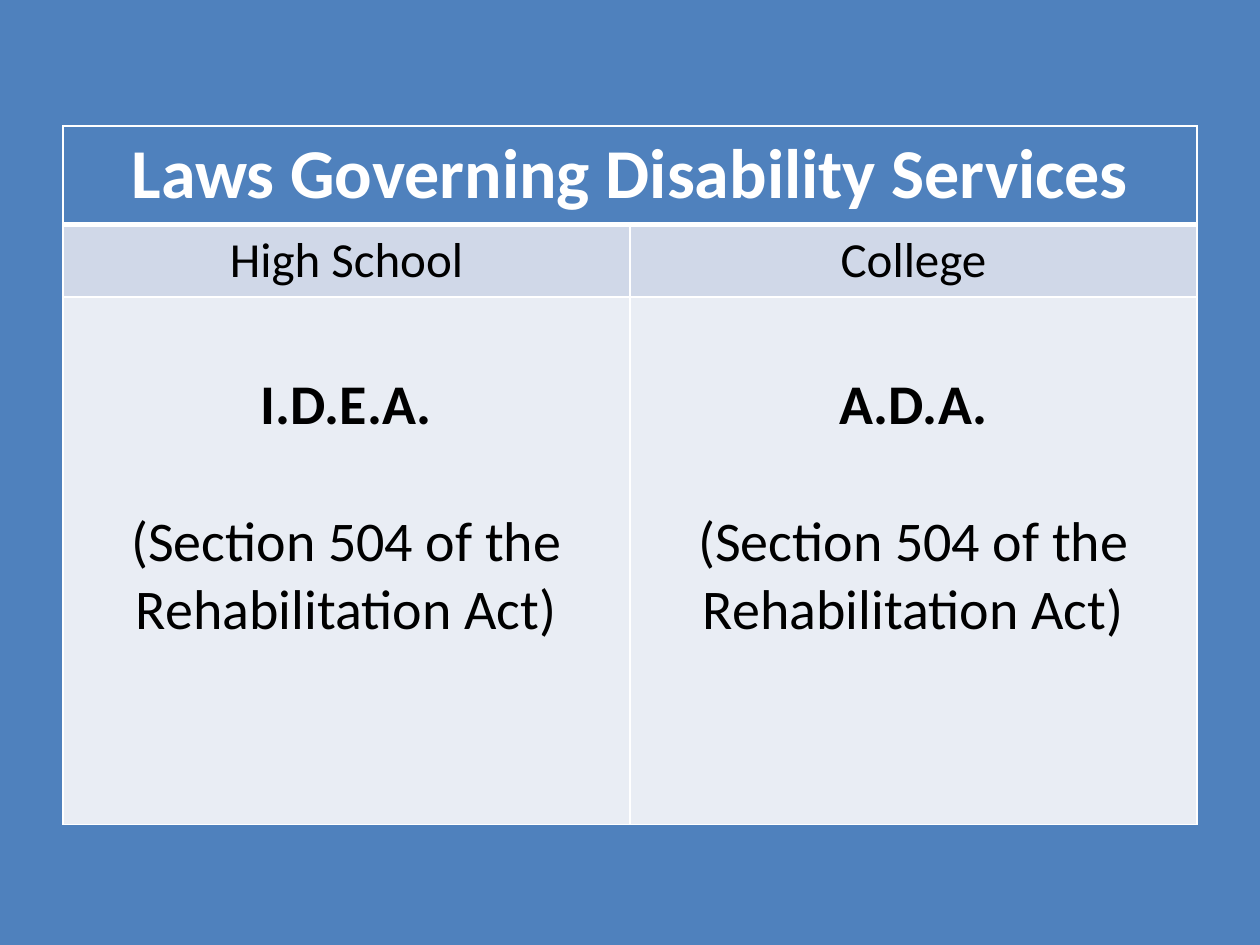
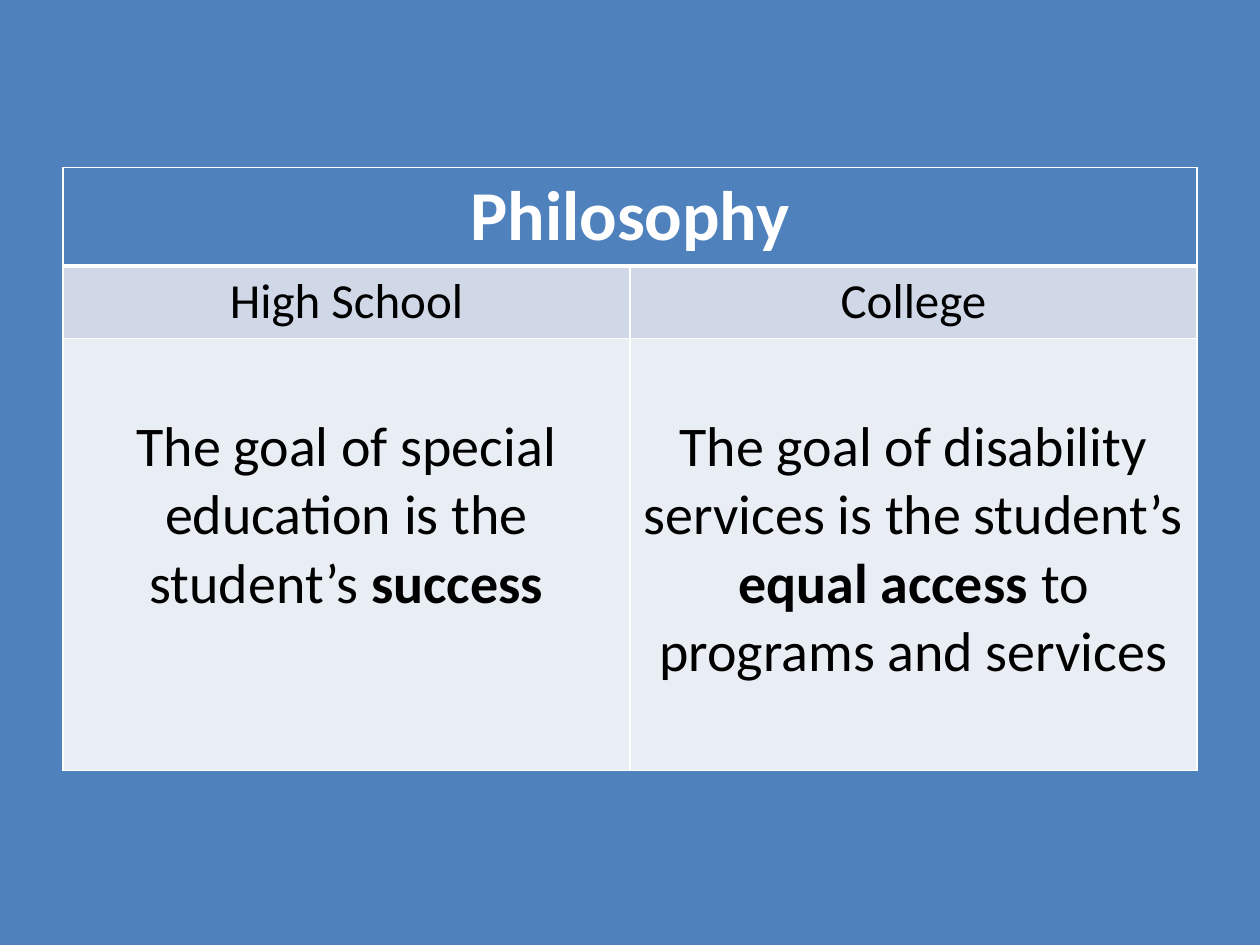
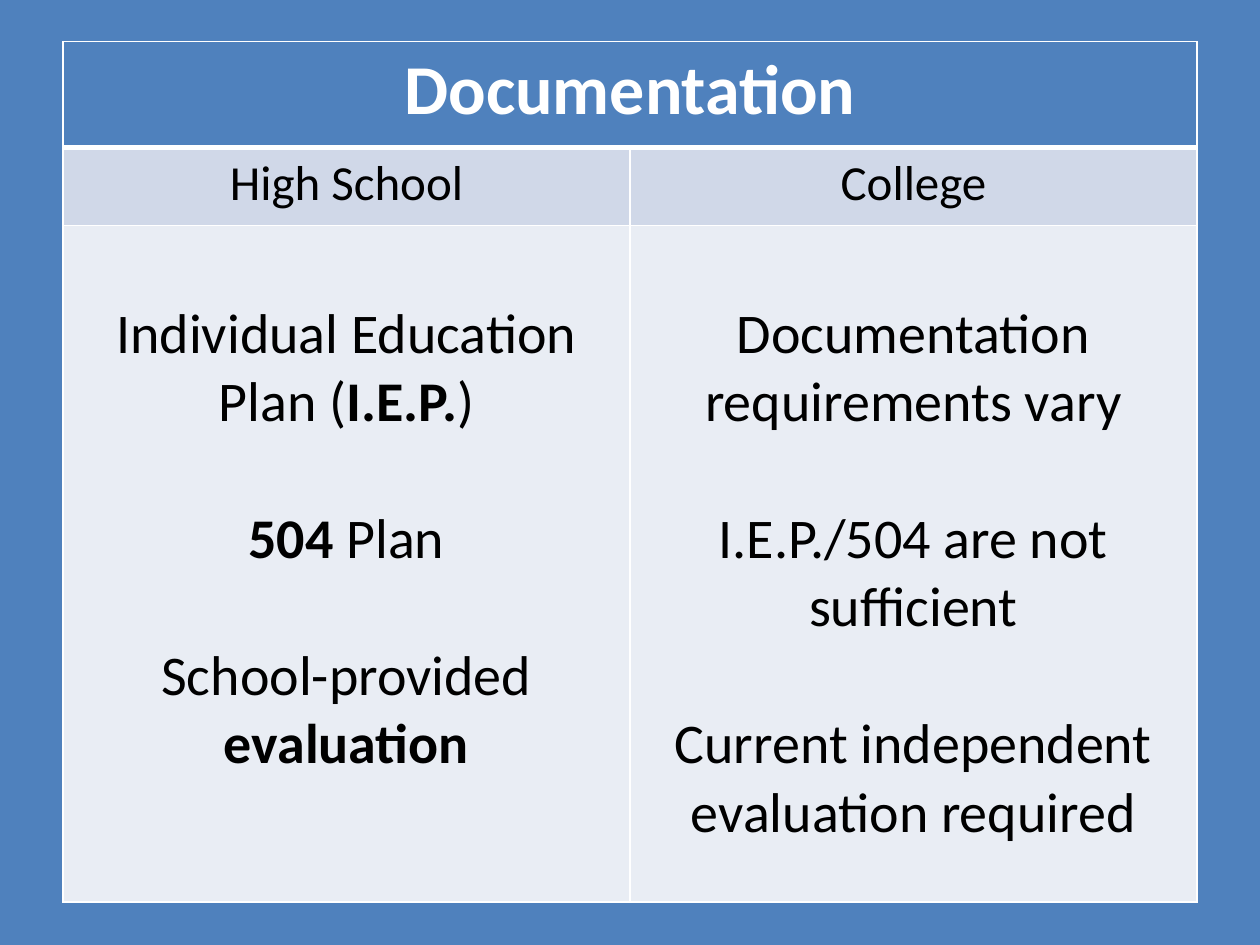
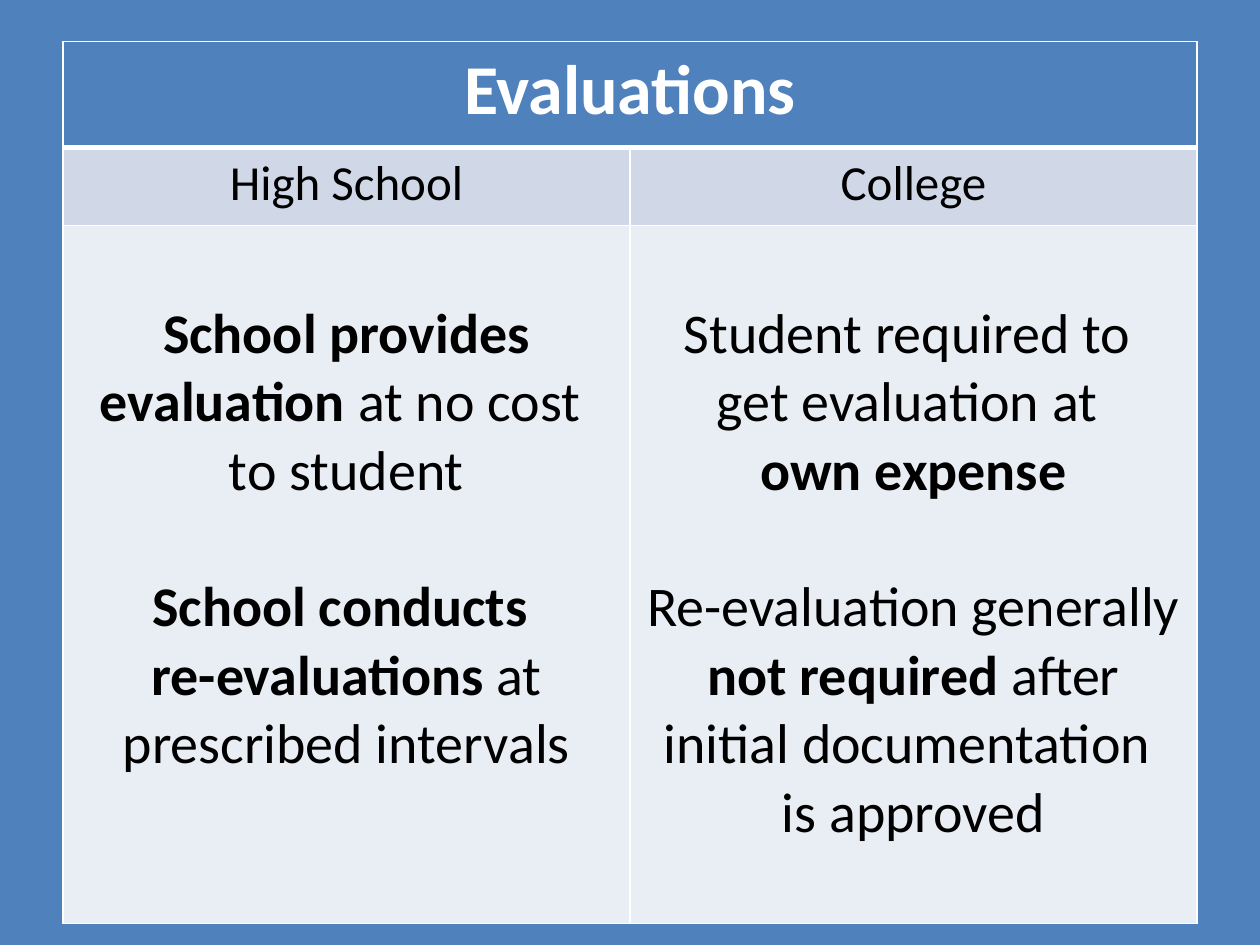
import pptx
import pptx.dml.color
import pptx.enum.text
import pptx.oxml
import pptx.oxml.ns
import pptx.util

Inches, Pt = pptx.util.Inches, pptx.util.Pt

COLORS = {
    "blue": "4F81BD",
    "band": "D0D8E8",
    "body": "E9EDF4",
    "white": "FFFFFF",
    "black": "000000",
}
FONT = "Calibri"
SLIDE_WIDTH, SLIDE_HEIGHT = 10, 7.5
SIDE_MARGIN = SLIDE_WIDTH / 20
TABLE_WIDTH = SLIDE_WIDTH - 2 * SIDE_MARGIN
BODY_LINE = 39  # points taken by one line of body text
CELL_INSET = 0.05
COMPACT_HEADS = (0.78, 0.57)
TALL_HEADS = (0.84, 0.62)

# Fill, text colour and text size of the title, school and body rows
ROW_STYLES = [("blue", "white", 40), ("band", "black", 28), ("body", "black", 32)]

# Text between ** marks is bold
COMPARISONS = [
    {
        "title": "Laws Governing Disability Services",
        "top": 1,
        "rows": (*COMPACT_HEADS, 4.19),
        "high_school": ["**I.D.E.A.**", "(Section 504 of the Rehabilitation Act)"],
        "college": ["**A.D.A.**", "(Section 504 of the Rehabilitation Act)"],
    },
    {
        "title": "Philosophy",
        "top": 1.33,
        "rows": (*COMPACT_HEADS, 3.43),
        "high_school": ["The goal of special education is the student’s **success**"],
        "college": [
            "The goal of disability services is the student’s "
            "**equal access **to programs and services"
        ],
    },
    {
        "title": "Documentation",
        "top": 0.33,
        "rows": (*TALL_HEADS, 5.37),
        "high_school": [
            "Individual Education Plan (**I.E.P.**)",
            "**504** Plan",
            "School-provided **evaluation**",
        ],
        "college": [
            "Documentation requirements vary",
            "I.E.P./504 are not sufficient",
            "Current independent evaluation required",
        ],
    },
    {
        "title": "Evaluations",
        "top": 0.33,
        "rows": (*TALL_HEADS, 5.54),
        "high_school": [
            "**School provides evaluation **at no cost \nto student",
            "**School conducts \nre-evaluations **at prescribed intervals",
        ],
        "college": [
            "Student required to \nget evaluation at \n**own expense**",
            "Re-evaluation generally **not required **after initial documentation "
            "\nis approved",
        ],
    },
]


def rgb(name):
    return pptx.dml.color.RGBColor.from_string(COLORS[name])


def add_marked_text(paragraph, text):
    """Add runs, bold between ** marks, with a line break at each newline."""
    for part, words in enumerate(text.split("**")):
        for line, line_text in enumerate(words.split("\n")):
            if line:
                paragraph.add_line_break()
            if line_text:
                run = paragraph.add_run()
                run.text = line_text
                run.font.bold = part % 2 == 1


def write_cell(cell, texts, color, size):
    frame = cell.text_frame
    for index, text in enumerate(texts):
        paragraph = frame.add_paragraph() if index else frame.paragraphs[0]
        paragraph.alignment = pptx.enum.text.PP_ALIGN.CENTER
        paragraph.font.name = FONT
        paragraph.font.size = Pt(size)
        paragraph.font.color.rgb = rgb(color)
        if index:
            paragraph.space_before = Pt(BODY_LINE)
        add_marked_text(paragraph, text)


def set_borders(cell, top=1, bottom=1):
    """Draw white cell borders; top and bottom are widths in points."""
    properties = cell._tc.get_or_add_tcPr()
    for side, width in (("L", 1), ("R", 1), ("T", top), ("B", bottom)):
        properties.append(pptx.oxml.parse_xml(
            f'<a:ln{side} {pptx.oxml.ns.nsdecls("a")} w="{Pt(width)}">'
            f'<a:solidFill><a:srgbClr val="{COLORS["white"]}"/></a:solidFill>'
            f'</a:ln{side}>'
        ))


def add_comparison(slide, comparison):
    heights = comparison["rows"]
    contents = [
        [[f"**{comparison['title']}**"], []],
        [["High School"], ["College"]],
        [comparison["high_school"], comparison["college"]],
    ]
    table = slide.shapes.add_table(
        len(contents), 2,
        Inches(SIDE_MARGIN), Inches(comparison["top"]),
        Inches(TABLE_WIDTH), Inches(sum(heights)),
    ).table
    table.cell(0, 0).merge(table.cell(0, 1))

    for row, (fill, color, size) in enumerate(ROW_STYLES):
        table.rows[row].height = Inches(heights[row])
        for column, texts in enumerate(contents[row]):
            cell = table.cell(row, column)
            set_borders(cell, top=3 if row == 1 else 1, bottom=3 if row == 0 else 1)
            cell.fill.solid()
            cell.fill.fore_color.rgb = rgb(fill)
            write_cell(cell, texts, color, size)
            if fill == "body":
                cell.margin_top = Inches(CELL_INSET) + Pt(BODY_LINE)


def main():
    presentation = pptx.Presentation()
    presentation.slide_width = Inches(SLIDE_WIDTH)
    presentation.slide_height = Inches(SLIDE_HEIGHT)
    background = presentation.slide_master.background.fill
    background.solid()
    background.fore_color.rgb = rgb("blue")
    blank_layout = presentation.slide_layouts.get_by_name("Blank")
    for comparison in COMPARISONS:
        add_comparison(presentation.slides.add_slide(blank_layout), comparison)
    presentation.save("out.pptx")


if __name__ == "__main__":
    main()
